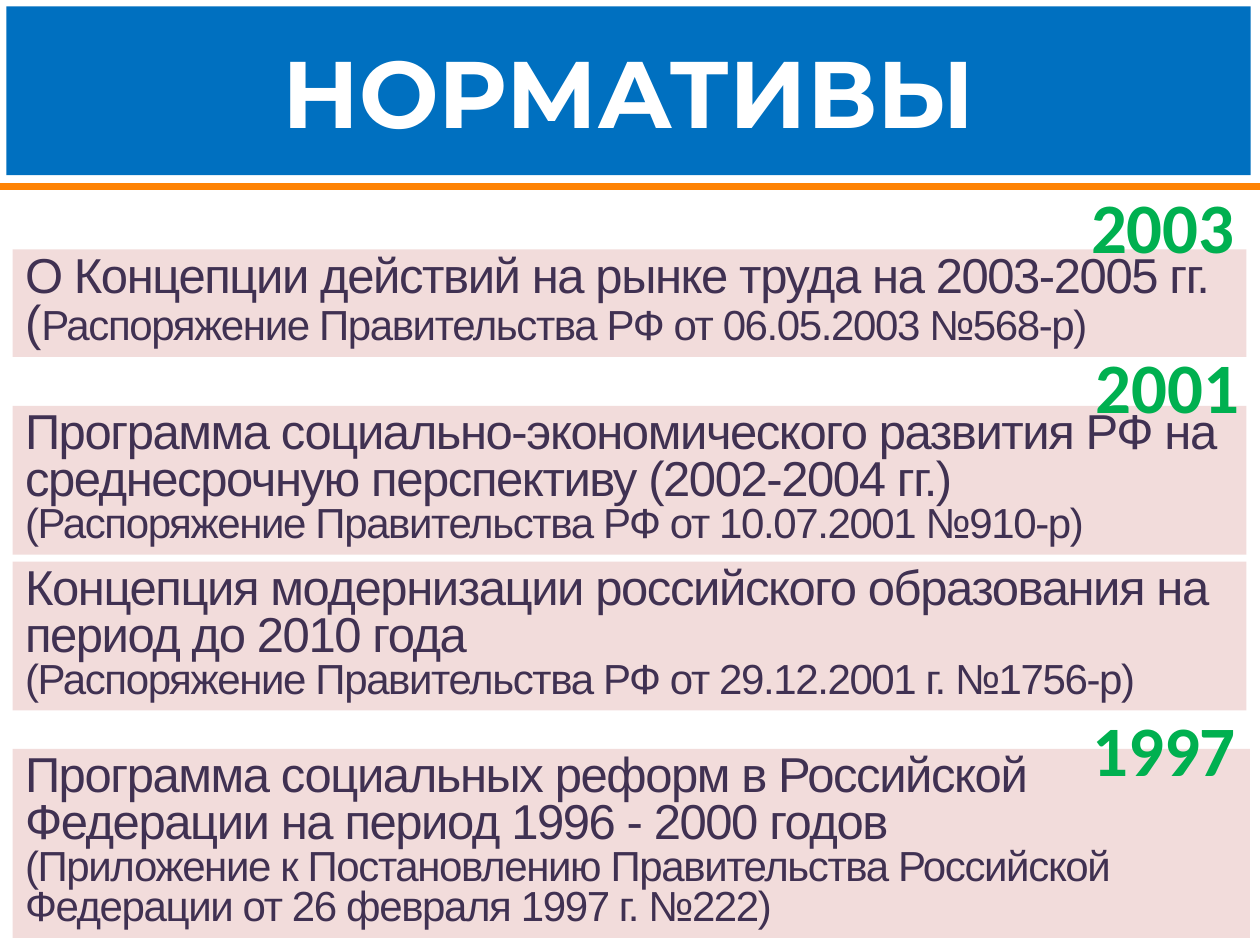
from lxml import etree
from pptx import Presentation
from pptx.dml.color import RGBColor
from pptx.enum import shapes, text
from pptx.oxml import ns
from pptx.util import Pt

BLUE = RGBColor(0x00, 0x70, 0xC0)
ORANGE = RGBColor(0xFE, 0x83, 0x04)
PINK = RGBColor(0xF2, 0xDC, 0xDB)
PURPLE = RGBColor(0x40, 0x31, 0x52)
GREEN = RGBColor(0x00, 0xB0, 0x50)
WHITE = RGBColor(0xFF, 0xFF, 0xFF)

TITLE = "НОРМАТИВЫ"
LARGE, SMALL = 28, 24
DOCUMENTS = [
    (142.5, 705, 61.5, [
        [("О Концепции действий на рынке труда на 2003-2005 гг.", LARGE)],
        [("(", LARGE), ("Распоряжение Правительства РФ от 06.05.2003 №568-р)", SMALL)],
    ]),
    (232, 705, 85, [
        [("Программа социально-экономического развития РФ на "
          "среднесрочную перспективу (2002-2004 гг.)", LARGE)],
        [("(Распоряжение Правительства РФ от 10.07.2001 №910-р)", SMALL)],
    ]),
    (321, 705, 85, [
        [("Концепция модернизации российского образования на период до 2010 года", LARGE)],
        [("(Распоряжение Правительства РФ от 29.12.2001 г. №1756-р)", SMALL)],
    ]),
    (428, 707, 108, [
        [("Программа социальных реформ в Российской Федерации "
          "на период 1996 - 2000 годов", LARGE)],
        [("(Приложение к Постановлению Правительства Российской Федерации "
          "от 26 февраля 1997 г. №222)", SMALL)],
    ]),
]
YEARS = [("2003", 617.8, 101.5), ("2001", 620.6, 193), ("1997", 618.5, 400.3)]


def format_run(run, font_name, size, color, bold=False):
    run.font.name = font_name
    run.font.size = Pt(size)
    run.font.bold = bold
    run.font.color.rgb = color


def add_title(slide):
    title = slide.shapes.title
    title.left, title.top, title.width, title.height = Pt(3.6), Pt(3.6), Pt(711), Pt(96.5)
    title.fill.solid()
    title.fill.fore_color.rgb = BLUE
    frame = title.text_frame
    frame.text = TITLE
    frame.vertical_anchor = text.MSO_ANCHOR.MIDDLE
    frame.paragraphs[0].alignment = text.PP_ALIGN.CENTER
    format_run(frame.paragraphs[0].runs[0], "Montserrat", 54, WHITE, True)


def add_rule(slide):
    rule = slide.shapes.add_connector(
        shapes.MSO_CONNECTOR.STRAIGHT, 0, Pt(106.6), Pt(720), Pt(106.6))
    rule.line.color.rgb = ORANGE
    rule.line.width = Pt(4.5)
    etree.SubElement(rule._element.spPr, ns.qn("a:effectLst"))


def add_document(slide, top, width, height, lines):
    box = slide.shapes.add_shape(
        shapes.MSO_SHAPE.RECTANGLE, Pt(7.2), Pt(top), Pt(width), Pt(height))
    box.shadow.inherit = False
    box.fill.solid()
    box.fill.fore_color.rgb = PINK
    box.line.fill.background()
    frame = box.text_frame
    frame.word_wrap = True
    frame.auto_size = text.MSO_AUTO_SIZE.SHAPE_TO_FIT_TEXT
    frame.vertical_anchor = text.MSO_ANCHOR.TOP
    for index, line in enumerate(lines):
        paragraph = frame.add_paragraph() if index else frame.paragraphs[0]
        paragraph.alignment = text.PP_ALIGN.LEFT
        paragraph.line_spacing = 0.8
        for wording, size in line:
            run = paragraph.add_run()
            run.text = wording
            format_run(run, "Arial", size, PURPLE)
            run.font._element.set("spc", "-80")


def add_year(slide, year, left, top):
    box = slide.shapes.add_textbox(Pt(left), Pt(top), Pt(93.6), Pt(54.7))
    frame = box.text_frame
    frame.word_wrap = False
    frame.auto_size = text.MSO_AUTO_SIZE.SHAPE_TO_FIT_TEXT
    frame.margin_left = frame.margin_right = Pt(5.4)
    frame.margin_top = frame.margin_bottom = Pt(2.7)
    frame.text = year
    paragraph = frame.paragraphs[0]
    paragraph.alignment = text.PP_ALIGN.CENTER
    run = paragraph.runs[0]
    format_run(run, "Calibri", 40.5, GREEN, True)
    outline = etree.Element(ns.qn("a:ln"), w=str(Pt(0.75)))
    fill = etree.SubElement(outline, ns.qn("a:solidFill"))
    etree.SubElement(fill, ns.qn("a:srgbClr"), val=str(WHITE))
    run.font._element.insert(0, outline)


def main():
    presentation = Presentation()
    presentation.slide_width, presentation.slide_height = Pt(720), Pt(540)
    slide = presentation.slides.add_slide(presentation.slide_layouts[5])
    add_title(slide)
    add_rule(slide)
    for document in DOCUMENTS:
        add_document(slide, *document)
    for year in YEARS:
        add_year(slide, *year)
    presentation.save("out.pptx")


if __name__ == "__main__":
    main()
